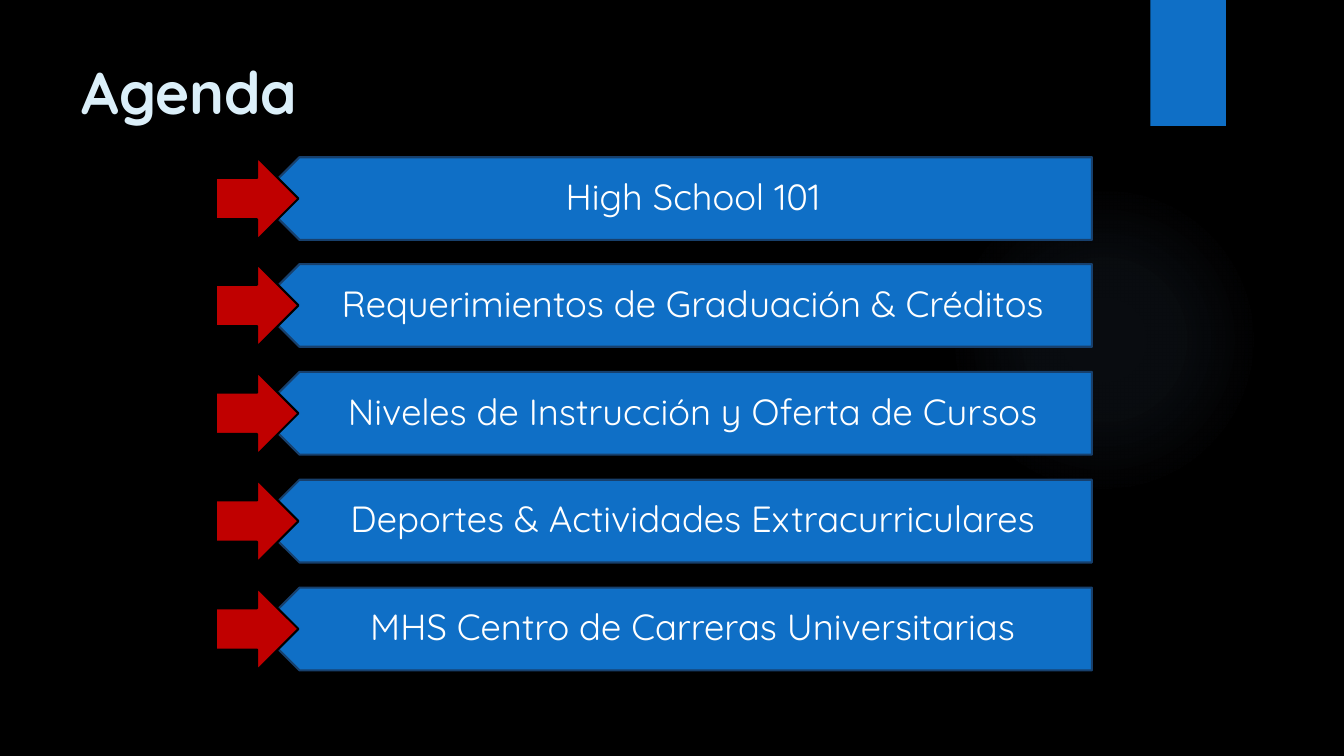
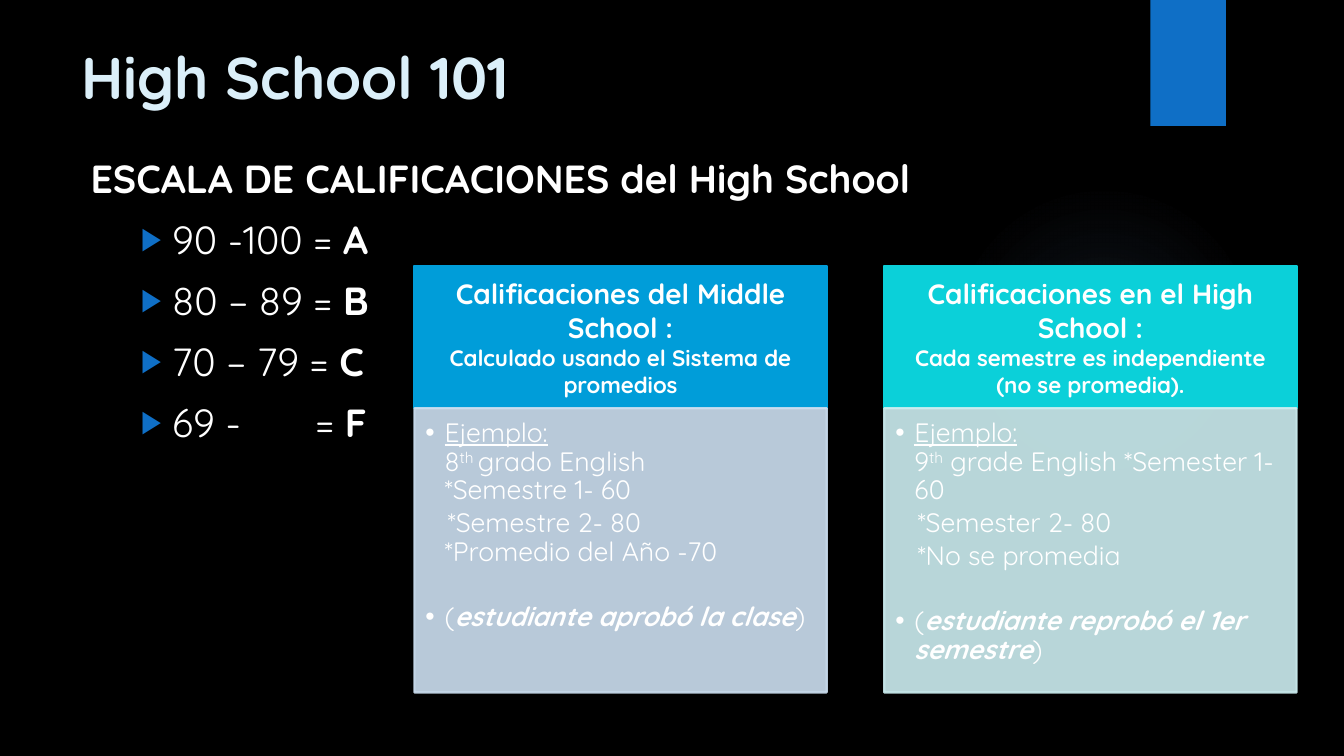
"""Build the agenda slide and the grading scale slide."""
from dataclasses import dataclass
from typing import NamedTuple

from lxml.etree import SubElement
from pptx import Presentation
from pptx.dml.color import RGBColor
from pptx.enum.shapes import MSO_SHAPE
from pptx.enum.text import MSO_ANCHOR, PP_ALIGN
from pptx.oxml import parse_xml
from pptx.oxml.ns import nsdecls, qn
from pptx.util import Emu, Pt

SCALE = 9144
FONT = "Quicksand"
BLACK = RGBColor(0x00, 0x00, 0x00)
WHITE = RGBColor(0xFF, 0xFF, 0xFF)
ICE = RGBColor(0xDB, 0xEF, 0xF9)
BLUE = RGBColor(0x0F, 0x6F, 0xC6)
NAVY = RGBColor(0x17, 0x40, 0x6D)
RED = RGBColor(0xC0, 0x00, 0x00)
GLOW = RGBColor(0x82, 0xB1, 0xE5)
SKY = RGBColor(0x00, 0x9D, 0xD9)
TEAL = RGBColor(0x0B, 0xD0, 0xD9)
PALE = RGBColor(0xCC, 0xDF, 0xF1)
MINT = RGBColor(0xCC, 0xEE, 0xF1)

TOPICS = (
    "High School 101",
    "Requerimientos de Graduación & Créditos",
    "Niveles de Instrucción y Oferta de Cursos",
    "Deportes & Actividades Extracurriculares",
    "MHS Centro de Carreras Universitarias",
)
GRADES = (("90 -100 = ", "A"), ("80 – 89 = ", "B"), ("70 – 79 = ", "C"), ("69 -\t= ", "F"))


class Box(NamedTuple):
    """Place and size in px."""
    left: int
    top: int
    width: int
    height: int


class Run(NamedTuple):
    """Text with one style."""
    text: str
    bold: bool = False
    slant: bool = False
    under: bool = False
    raised: bool = False


class Mark(NamedTuple):
    """Bullet sign, with its own colour and size if any."""
    sign: str
    tint: RGBColor | None = None
    size: int = 100


@dataclass(frozen=True)
class Para:
    """Paragraph of runs, with indents in px and gaps in points."""
    runs: tuple[Run, ...]
    size: int
    color: RGBColor = WHITE
    align: PP_ALIGN = PP_ALIGN.LEFT
    lines: float = 1.0
    before: int = 0
    after: int = 0
    left: int = 0
    first: int = 0
    mark: Mark | None = None
    tab: int = 0


@dataclass(frozen=True)
class Card:
    """Heading panel over a panel of notes."""
    left: int
    dark: RGBColor
    light: RGBColor
    head: tuple[Para, ...]
    notes: tuple[Para, ...]


def px(count: int) -> Emu:
    """Turn px into EMU."""
    return Emu(count * SCALE)


def shape(slide, kind: MSO_SHAPE, box: Box, fill: RGBColor, line: RGBColor | None = None):
    """Draw a flat preset shape."""
    item = slide.shapes.add_shape(kind, *map(px, box))
    item.shadow.inherit = False
    item.fill.solid()
    item.fill.fore_color.rgb = fill
    if line is None:
        item.line.fill.background()
    else:
        item.line.color.rgb = line
        item.line.width = Pt(1.5)
    return item


def fade(color, share: int) -> None:
    """Give a solid colour an opacity in percent."""
    node = color._xFill.find(qn("a:srgbClr"))
    SubElement(node, qn("a:alpha"), val=str(share * 1000))


def layout(para, plan: Para) -> None:
    """Set the indents, bullet and tab of a paragraph."""
    props = para._p.get_or_add_pPr()
    props.set("marL", str(px(plan.left)))
    props.set("indent", str(px(plan.first)))
    if plan.mark:
        if plan.mark.tint is not None:
            tint = SubElement(props, qn("a:buClr"))
            SubElement(tint, qn("a:srgbClr"), val=str(plan.mark.tint))
        SubElement(props, qn("a:buSzPct"), val=str(plan.mark.size * 1000))
        SubElement(props, qn("a:buFont"), typeface="Arial")
        SubElement(props, qn("a:buChar"), char=plan.mark.sign)
    if plan.tab:
        tabs = SubElement(props, qn("a:tabLst"))
        SubElement(tabs, qn("a:tab"), pos=str(px(plan.tab)), algn="l")


def write(frame, plans: tuple[Para, ...]) -> None:
    """Fill a text frame run by run."""
    for spot, plan in enumerate(plans):
        para = frame.add_paragraph() if spot else frame.paragraphs[0]
        layout(para, plan)
        para.alignment = plan.align
        para.line_spacing = plan.lines
        para.space_before = Pt(plan.before)
        para.space_after = Pt(plan.after)
        for part in plan.runs:
            if part.text == "\n":
                para.add_line_break()
                continue
            run = para.add_run()
            run.text = part.text
            font = run.font
            font.name, font.size = FONT, Pt(plan.size)
            font.bold, font.italic, font.underline = part.bold, part.slant, part.under
            font.color.rgb = plan.color
            if part.raised:
                font._element.set("baseline", "30000")


def text(slide, box: Box, plans: tuple[Para, ...], pads: tuple[int, ...] = (10, 5, 10, 5),
         anchor: MSO_ANCHOR = MSO_ANCHOR.TOP) -> None:
    """Add a wrapped text box."""
    frame = slide.shapes.add_textbox(*map(px, box)).text_frame
    frame.word_wrap = True
    frame.vertical_anchor = anchor
    (frame.margin_left, frame.margin_top,
     frame.margin_right, frame.margin_bottom) = map(px, pads)
    write(frame, plans)


def glow(slide) -> None:
    """Draw the soft round light."""
    item = shape(slide, MSO_SHAPE.OVAL, Box(941, 183, 308, 308), GLOW)
    stops = "".join(
        f'<a:gs pos="{place}000"><a:srgbClr val="{GLOW}"><a:alpha val="{share}000"/></a:srgbClr></a:gs>'
        for place, share in ((0, 7), (36, 6), (69, 0)))
    grad = parse_xml(
        f'<a:gradFill {nsdecls("a")} rotWithShape="1"><a:gsLst>{stops}</a:gsLst><a:path path="circle">'
        '<a:fillToRect l="50000" t="50000" r="50000" b="50000"/></a:path></a:gradFill>')
    props = item._element.spPr
    props.replace(props.find(qn("a:solidFill")), grad)


def start(deck, title: str, top: int, height: int):
    """Add a slide with the shared backdrop and title."""
    slide = deck.slides.add_slide(deck.slide_layouts[6])
    slide.background.fill.solid()
    slide.background.fill.fore_color.rgb = BLACK
    glow(slide)
    shape(slide, MSO_SHAPE.RECTANGLE, Box(1141, 0, 75, 125), BLUE)
    text(slide, Box(71, top, 1029, height), (Para((Run(title, bold=True),), 42, ICE),))
    return slide


def agenda(deck) -> None:
    """Draw the list of topics."""
    slide = start(deck, "Agenda", 50, 82)
    for row, topic in enumerate(TOPICS):
        top = 156 + row * 427 // 4
        plate = shape(slide, MSO_SHAPE.PENTAGON, Box(256, top, 827, 82), BLUE, NAVY)
        plate.rotation = 180
        label = Para((Run(topic),), 26, align=PP_ALIGN.CENTER, lines=0.9)
        text(slide, Box(276, top, 807, 82), (label,), (36, 11, 20, 11), MSO_ANCHOR.MIDDLE)
        shape(slide, MSO_SHAPE.RIGHT_ARROW, Box(214, top, 82, 82), RED, BLACK)


def head(title: str, *notes: str) -> tuple[Para, ...]:
    """Make a card heading."""
    sizes = (20,) + (16,) * len(notes)
    return tuple(Para((Run(line, bold=True),), size, align=PP_ALIGN.CENTER)
                 for line, size in zip((title, *notes), sizes))


def point(*runs: Run, before: int = 0) -> Para:
    """Make a bulleted card note."""
    return Para(runs, 19, lines=0.9, before=before, after=3, left=19, first=-19, mark=Mark("•"))


def plain(*runs: Run) -> Para:
    """Make a card note with no bullet."""
    return Para(runs, 19, lines=0.9, after=3, left=19, first=3)


def result(words: str) -> Para:
    """Make the closing note of a card."""
    return point(Run("("), Run(words, bold=True, slant=True), Run(")"), before=23)


BREAK = Run("\n")
SAMPLE = (Run("Ejemplo:", under=True), BREAK)
CARDS = (
    Card(411, SKY, PALE,
         head("Calificaciones del Middle School :", "Calculado usando el Sistema de promedios"),
         (point(*SAMPLE, Run("8"), Run("th ", raised=True), Run("grado English"), BREAK,
                Run("*Semestre 1- 60")),
          plain(Run("*Semestre 2- 80"), BREAK, Run("*Promedio del Año -70")),
          result("estudiante aprobó la clase"))),
    Card(877, TEAL, MINT,
         head("Calificaciones en el High School :", "Cada semestre es independiente",
              "(no se promedia)."),
         (point(*SAMPLE, Run("9"), Run("th", raised=True), Run(" grade English *Semester 1- 60")),
          plain(Run("*Semester 2- 80")),
          plain(Run("*No se promedia")),
          result("estudiante reprobó el 1er semestre"))),
)


def draw(slide, card: Card) -> None:
    """Draw one card."""
    top = Box(card.left, 264, 409, 141)
    base = Box(card.left, 405, 409, 282)
    shape(slide, MSO_SHAPE.RECTANGLE, top, card.dark, card.dark)
    text(slide, top, card.head, (16, 9, 16, 9), MSO_ANCHOR.MIDDLE)
    panel = shape(slide, MSO_SHAPE.RECTANGLE, base, card.light, card.light)
    for fill in (panel.fill, panel.line.fill):
        fade(fill.fore_color, 90)
    text(slide, base, card.notes, (11, 11, 15, 17))


def scale(deck) -> None:
    """Draw the grading scale and its two cards."""
    slide = start(deck, "High School 101", 35, 93)
    lead = Para((Run("ESCALA DE CALIFICACIONES del High School", bold=True),), 28)
    marks = tuple(
        Para((Run(span), Run(grade, bold=True)), 28, before=10, left=81, first=-31,
             mark=Mark("▶", BLUE, 80), tab=223 if "\t" in span else 0)
        for span, grade in GRADES)
    text(slide, Box(80, 148, 1010, 550), (lead, *marks))
    for card in CARDS:
        draw(slide, card)


def main() -> None:
    """Build and save the deck."""
    deck = Presentation()
    deck.slide_width, deck.slide_height = px(1333), px(750)
    agenda(deck)
    scale(deck)
    deck.save("out.pptx")


if __name__ == "__main__":
    main()
